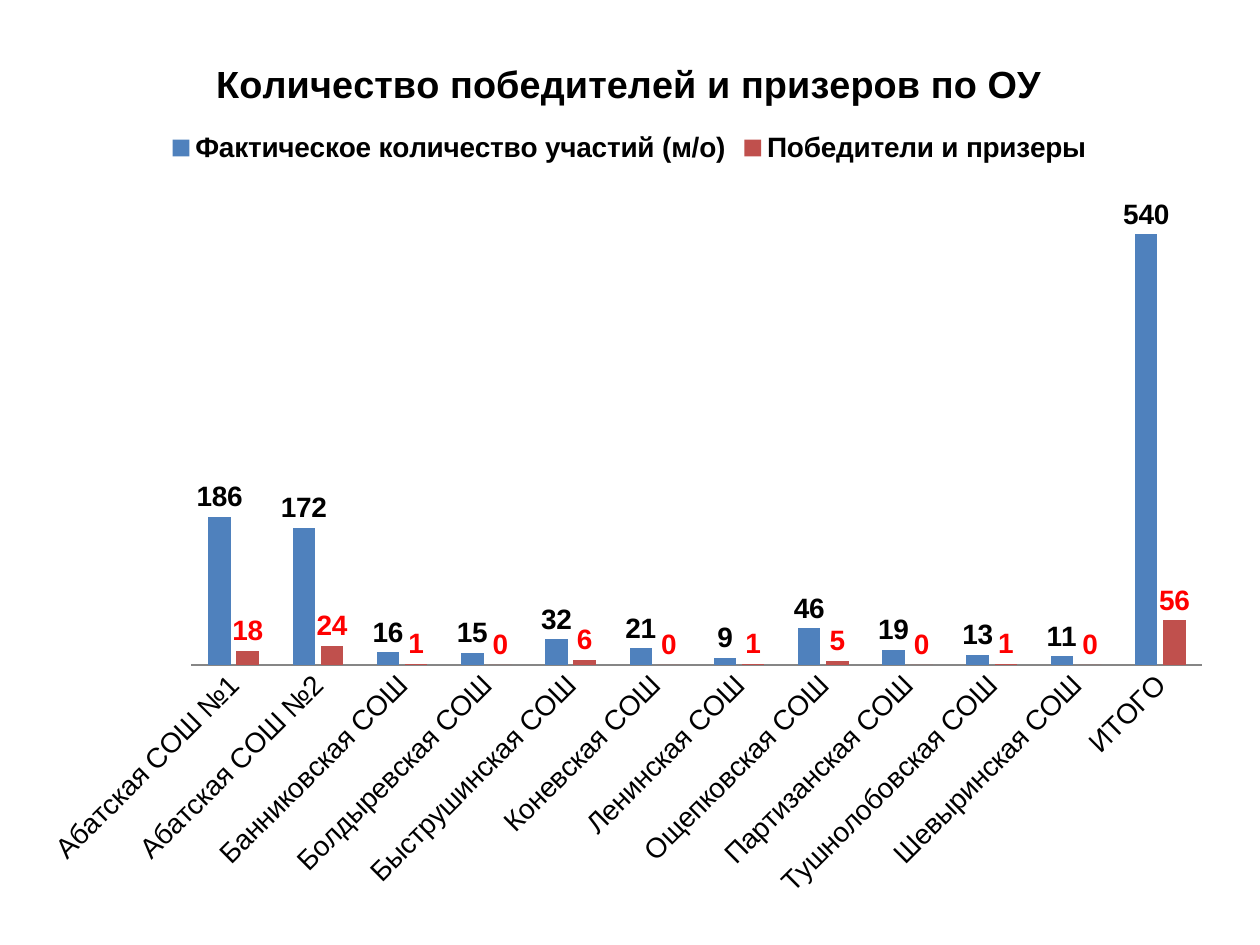
from pptx import Presentation
from pptx.chart.data import CategoryChartData
from pptx.dml.color import RGBColor
from pptx.enum.chart import (
    XL_CHART_TYPE, XL_LABEL_POSITION, XL_LEGEND_POSITION, XL_TICK_MARK)
from pptx.util import Inches, Pt

COLORS = {"text": "000000", "total": "4F81BD", "prize": "C0504D",
          "mark": "FF0000", "axis": "868686"}


def style(font, color="text", **values):
    for key, value in values.items():
        setattr(font, key, value)
    font.color.rgb = RGBColor.from_string(COLORS[color])


# Slide
deck = Presentation()
deck.slide_width, deck.slide_height = Inches(10), Inches(7.5)
slide = deck.slides.add_slide(deck.slide_layouts[6])

# Data: school, entries, winners
rows = [
    ("Абатская СОШ №1", 186, 18),
    ("Абатская СОШ №2", 172, 24),
    ("Банниковская СОШ", 16, 1),
    ("Болдыревская СОШ", 15, 0),
    ("Быструшинская СОШ", 32, 6),
    ("Коневская СОШ", 21, 0),
    ("Ленинская СОШ", 9, 1),
    ("Ощепковская СОШ", 46, 5),
    ("Партизанская СОШ", 19, 0),
    ("Тушнолобовская СОШ", 13, 1),
    ("Шевыринская СОШ", 11, 0),
    ("ИТОГО", 540, 56),
]
names, total, prize = zip(*rows)
data = CategoryChartData()
data.categories = names
data.add_series("Фактическое количество участий (м/о)", total)
data.add_series("Победители и призеры", prize)

# Chart
chart = slide.shapes.add_chart(
    XL_CHART_TYPE.COLUMN_CLUSTERED, Inches(0.23), Inches(0.23),
    Inches(9.53), Inches(7.03), data).chart
style(chart.font, name="Calibri", size=Pt(18))

# Title
chart.has_title = True
frame = chart.chart_title.text_frame
frame.text = "Количество победителей и призеров по ОУ"
style(frame.paragraphs[0].runs[0].font, name="Arial", size=Pt(21.6), bold=True)
chart.chart_title.include_in_layout = False

# Legend
label = {"name": "Arial", "size": Pt(16), "bold": True}
chart.has_legend = True
chart.legend.position = XL_LEGEND_POSITION.TOP
chart.legend.include_in_layout = False
style(chart.legend.font, **label)

# Axes
schools = chart.category_axis
schools.major_tick_mark = XL_TICK_MARK.NONE
schools.format.line.color.rgb = RGBColor.from_string(COLORS["axis"])
style(schools.tick_labels.font, name="Arial", size=Pt(16), bold=False)
chart.value_axis.visible = False
chart.value_axis.has_major_gridlines = False

# Bars and their labels
plot = chart.plots[0]
plot.vary_by_categories = False
plot.gap_width, plot.overlap = 150, -25
for bars, fill, ink in zip(plot.series, ("total", "prize"), ("text", "mark")):
    bars.format.fill.solid()
    bars.format.fill.fore_color.rgb = RGBColor.from_string(COLORS[fill])
    bars.data_labels.show_value = True
    bars.data_labels.position = XL_LABEL_POSITION.OUTSIDE_END
    style(bars.data_labels.font, ink, **label)

deck.save("out.pptx")
